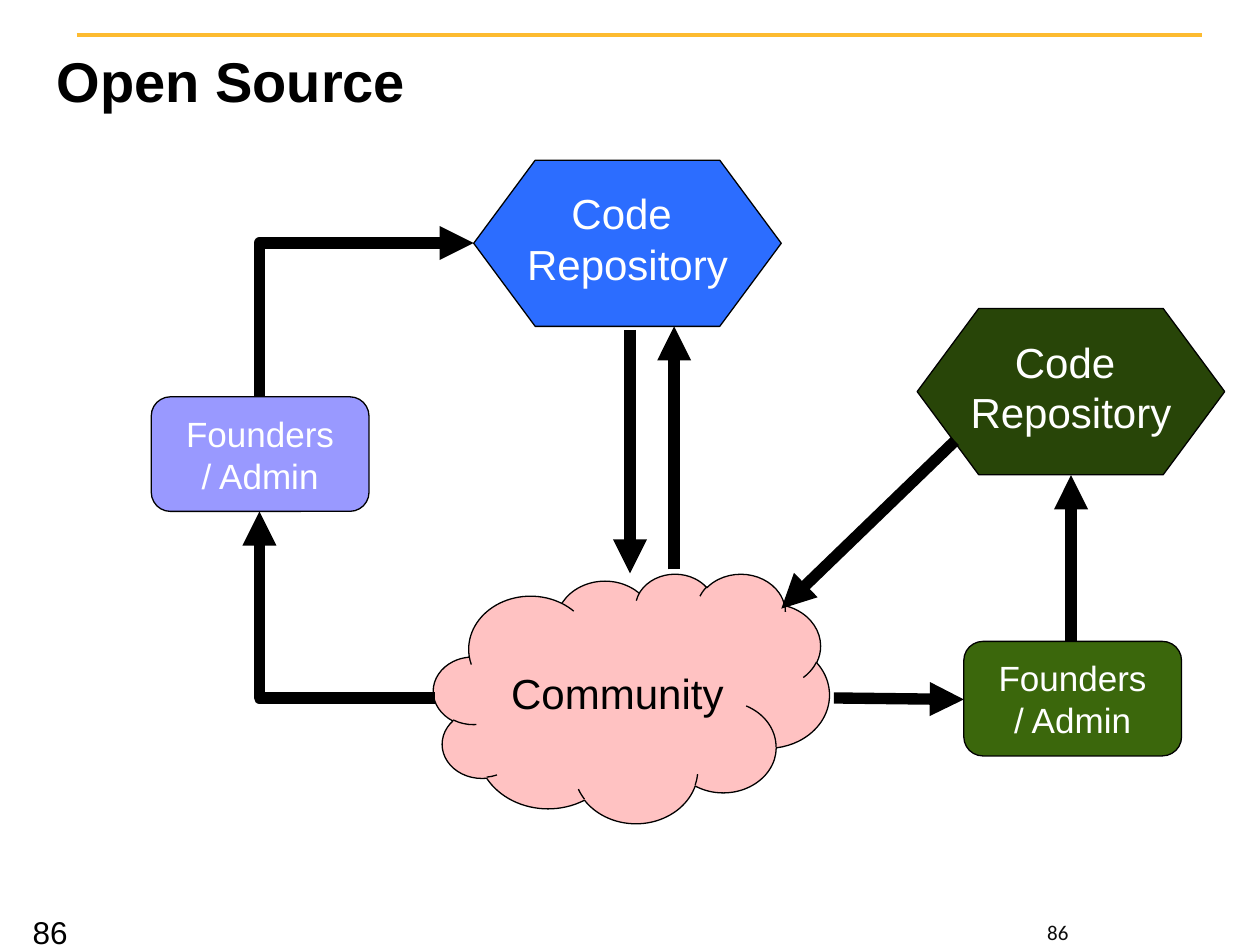
from dataclasses import dataclass

from lxml.etree import SubElement
from pptx import Presentation
from pptx.dml.color import RGBColor
from pptx.enum.shapes import MSO_CONNECTOR as Link, MSO_SHAPE as Shape
from pptx.enum.text import MSO_ANCHOR as Anchor, PP_ALIGN as Align
from pptx.oxml.ns import qn
from pptx.util import Cm, Pt

Point = tuple[float, float]


@dataclass(frozen=True)
class Theme:
    font: str = "Arial"
    small_font: str = "Calibri"
    black: str = "000000"
    white: str = "FFFFFF"
    gray: str = "0D0D0D"
    gold: str = "FDBB30"
    blue: str = "2C6DFF"
    pink: str = "FFC2C2"
    violet: str = "9999FF"
    green: str = "3B670C"
    dark_green: str = "284508"
    title: float = 32
    large: float = 24
    medium: float = 20
    number: float = 18
    small: float = 12
    outline: float = 0.75
    rule: float = 2
    arrow: float = 6.5


T = Theme()


@dataclass(frozen=True)
class Kind:
    shape: Shape
    width: float
    height: float
    text: str
    size: float
    text_color: str = T.white


@dataclass(frozen=True)
class Node:
    kind: Kind
    left: float
    top: float
    fill: str


REPOSITORY = Kind(Shape.FLOWCHART_PREPARATION, 6.2, 3.35, "Code \nRepository", T.large)
FOUNDERS = Kind(Shape.ROUNDED_RECTANGLE, 4.39, 2.31, "Founders\n/ Admin", T.medium)
COMMUNITY = Kind(Shape.CLOUD, 7.98, 5.03, "Community", T.large, T.black)

NODES = [
    Node(REPOSITORY, 9.55, 3.23, T.blue),
    Node(COMMUNITY, 8.74, 11.56, T.pink),
    Node(FOUNDERS, 3.05, 8, T.violet),
    Node(FOUNDERS, 19.43, 12.93, T.green),
    Node(REPOSITORY, 18.49, 6.22, T.dark_green),
]
ARROWS = [
    ((12.7, 6.65), (12.7, 11.56)),
    ((13.59, 11.48), (13.59, 6.58)),
    ((16.81, 14.07), (19.43, 14.1)),
    ((21.59, 12.93), (21.59, 9.58)),
    ((19.25, 8.89), (15.75, 12.27)),
]


def set_text(tf, text: str, size: float, color: str, font: str = T.font,
             align: Align = Align.LEFT, bold: bool = False):
    p = tf.paragraphs[0]
    p.text = text
    p.alignment = align
    p.font.name, p.font.size, p.font.bold = font, Pt(size), bold
    p.font.color.rgb = RGBColor.from_string(color)
    return p


def add_node(s, node: Node) -> None:
    kind = node.kind
    sp = s.shapes.add_shape(kind.shape, Cm(node.left), Cm(node.top),
                            Cm(kind.width), Cm(kind.height))
    sp.shadow.inherit = False
    sp.fill.solid()
    sp.fill.fore_color.rgb = RGBColor.from_string(node.fill)
    sp.line.color.rgb = RGBColor.from_string(T.black)
    sp.line.width = Pt(T.outline)
    tf = sp.text_frame
    tf.vertical_anchor = Anchor.MIDDLE
    tf.word_wrap = kind is not REPOSITORY
    p = set_text(tf, kind.text, kind.size, kind.text_color, align=Align.CENTER)
    if kind is REPOSITORY:
        tf.margin_left = tf.margin_right = 0
        tf.margin_top, tf.margin_bottom = Cm(0.2), Cm(0.4)
        p.space_after = Pt(6)


def add_line(s, start: Point, end: Point, color: str, width: float,
             link: Link = Link.STRAIGHT):
    line = s.shapes.add_connector(link, *(Cm(v) for v in start + end))
    line.line.color.rgb = RGBColor.from_string(color)
    line.line.width = Pt(width)
    SubElement(line._element.spPr, qn("a:effectLst"))
    return line


def add_arrow(s, start: Point, end: Point, link: Link = Link.STRAIGHT):
    arrow = add_line(s, start, end, T.black, T.arrow, link)
    SubElement(arrow.line._get_or_add_ln(), qn("a:tailEnd"), type="triangle")
    return arrow


def add_elbow(s, start: Point, end: Point, vertical_first: bool) -> None:
    """One-bend arrow; the box is laid out unrotated, then turned about its centre."""
    if vertical_first:
        cx, cy = (start[0] + end[0]) / 2, (start[1] + end[1]) / 2
        half_w, half_h = abs(end[1] - start[1]) / 2, abs(end[0] - start[0]) / 2
        begin, finish, turn = (cx + half_w, cy + half_h), (cx - half_w, cy - half_h), 90
    else:
        begin, finish, turn = end, start, 180
    arrow = add_arrow(s, begin, finish, Link.ELBOW)
    sp_pr = arrow._element.spPr
    sp_pr.find(qn("a:prstGeom")).set("prst", "bentConnector2")
    sp_pr.find(qn("a:xfrm")).set("rot", str(turn * 60000))


def add_title(s, text: str) -> None:
    title = s.shapes.title
    title.left, title.top, title.width, title.height = Cm(0.89), Cm(0.53), Cm(24.08), Cm(2.16)
    tf = title.text_frame
    tf.vertical_anchor = Anchor.MIDDLE
    p = set_text(tf, text, T.title, T.black, bold=True)
    r = p.runs[0]
    r.font.color.rgb = RGBColor.from_string(T.black)
    effects = SubElement(r._r.get_or_add_rPr(), qn("a:effectLst"))
    shadow = SubElement(effects, qn("a:outerShdw"), blurRad="38100", dist="38100", dir="2700000")
    color = SubElement(shadow, qn("a:srgbClr"), val=T.black)
    SubElement(color, qn("a:alpha"), val="43000")


def add_number(s, left: float, top: float, width: float, height: float):
    tf = s.shapes.add_textbox(Cm(left), Cm(top), Cm(width), Cm(height)).text_frame
    tf.word_wrap = True
    return tf


def main() -> None:
    prs = Presentation()
    prs.slide_width, prs.slide_height = Cm(25.4), Cm(19.05)
    s = prs.slides.add_slide(prs.slide_layouts[5])

    add_line(s, (1.55, 0.71), (24.23, 0.71), T.gold, T.rule)
    add_title(s, "Open Source")
    tf = add_number(s, 19.18, 18.54, 4.29, 0.51)
    tf.vertical_anchor = Anchor.MIDDLE
    set_text(tf, "86", T.small, T.gray, T.small_font, Align.CENTER)
    set_text(add_number(s, 0.41, 18.29, 1.93, 0.79), "86", T.number, T.black)

    for node in NODES:
        add_node(s, node)
    for start, end in ARROWS:
        add_arrow(s, start, end)
    add_elbow(s, (8.76, 14.07), (5.23, 10.31), vertical_first=False)
    add_elbow(s, (5.23, 8), (9.55, 4.9), vertical_first=True)

    prs.save("out.pptx")


if __name__ == "__main__":
    main()
